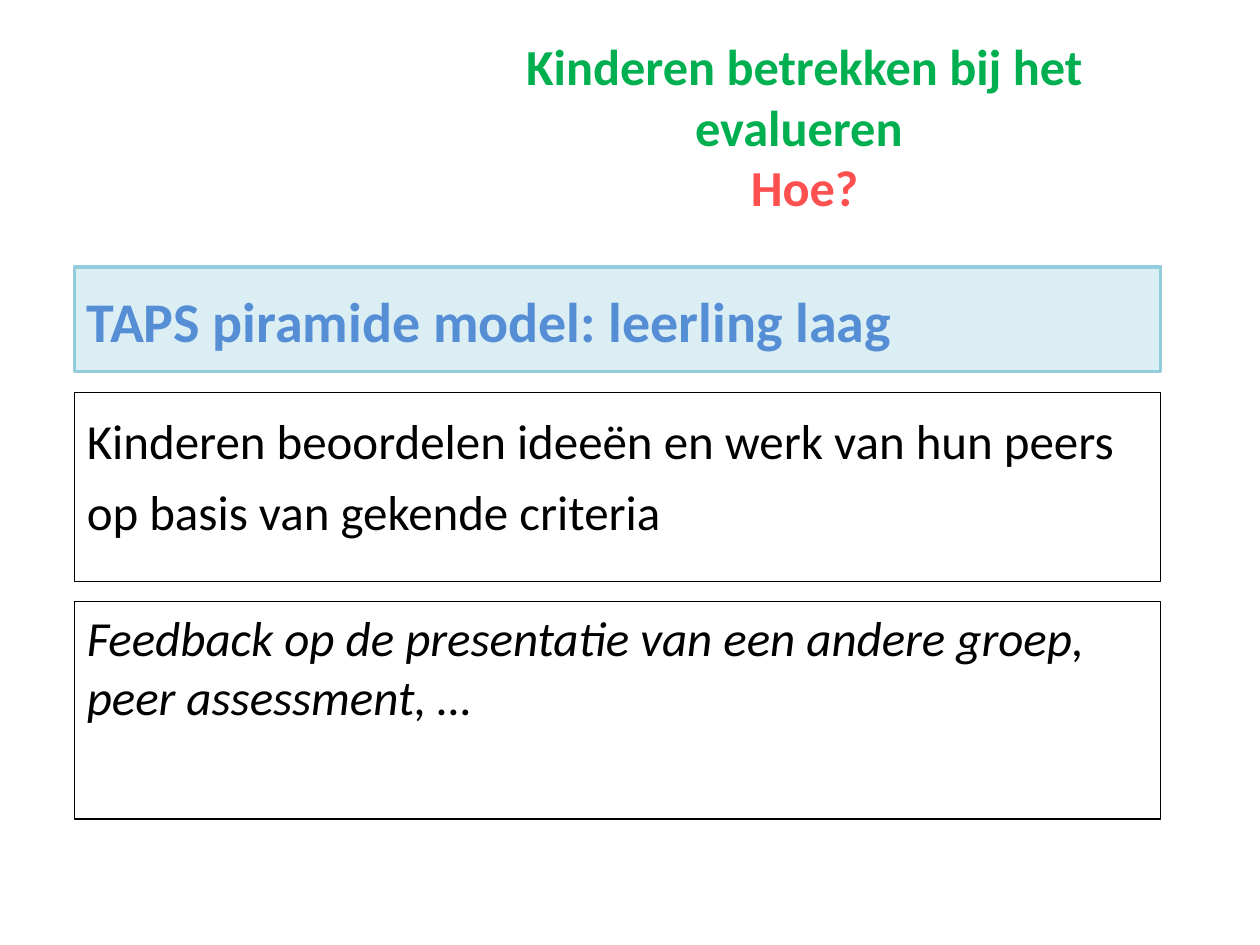
import pptx
import pptx.dml.color
import pptx.enum.shapes
import pptx.enum.text
import pptx.util

Cm, Pt = pptx.util.Cm, pptx.util.Pt
ALIGN = pptx.enum.text.PP_ALIGN
ANCHOR = pptx.enum.text.MSO_ANCHOR


def paint(target, color):
    """Give a fill a solid colour, or a font or line its colour."""
    if hasattr(target, "solid"):
        target.solid()
        target = target.fore_color
    else:
        target = target.color
    target.rgb = pptx.dml.color.RGBColor.from_string(color)


def style(item, values):
    for name, value in values.items():
        setattr(item, name, value)


def write(para, text, color, **look):
    run = para.add_run()
    run.text = text
    style(run.font, {"name": "Calibri", **look})
    paint(run.font, color)


def add_title(slide, box):
    title = slide.shapes.title
    style(title, dict(zip(("left", "top", "width", "height"), box)))
    style(title.text_frame, {
        "word_wrap": True,
        "auto_size": pptx.enum.text.MSO_AUTO_SIZE.NONE,
        "vertical_anchor": ANCHOR.MIDDLE,
    })
    para = title.text_frame.paragraphs[0]
    para.alignment = ALIGN.CENTER
    look = {"size": Pt(28.8), "bold": True}
    write(para, "Kinderen betrekken bij het evalueren ", "00B050", **look)
    para.add_line_break()
    write(para, "Hoe?", "FF5050", **look)


def add_panel(slide, box, text, color="000000", fill=None, edge="000000",
              width=0.75, space=1.0, **look):
    kind = pptx.enum.shapes.MSO_SHAPE.RECTANGLE
    panel = slide.shapes.add_shape(kind, *box)
    panel.shadow.inherit = False
    if fill:
        paint(panel.fill, fill)
    else:
        panel.fill.background()
    paint(panel.line, edge)
    panel.line.width = Pt(width)
    frame = panel.text_frame
    style(frame, {"word_wrap": True, "vertical_anchor": ANCHOR.TOP})
    para = frame.paragraphs[0]
    style(para, {"alignment": ALIGN.LEFT, "line_spacing": space})
    write(para, text, color, **look)


def main():
    deck = pptx.Presentation()
    style(deck, {"slide_width": Cm(25.4), "slide_height": Cm(19.05)})
    slide = deck.slides.add_slide(deck.slide_layouts.get_by_name("Title Only"))
    add_title(slide, (Cm(8.31), Cm(0.76), Cm(15.82), Cm(3.56)))

    panels = [
        (5.38, 2.11, "TAPS piramide model: leerling laag",
         {"color": "558ED5", "fill": "DBEEF4", "edge": "93CDDD", "width": 2,
          "space": 1.2, "size": Pt(32), "bold": True}),
        (7.92, 3.81, "Kinderen beoordelen ideeën en werk van hun peers "
         "op basis van gekende criteria",
         {"space": 1.2, "size": Pt(28)}),
        (12.12, 4.39, "Feedback op de presentatie van een andere groep, "
         "peer assessment, …",
         {"size": Pt(28), "italic": True}),
    ]
    for top, height, text, look in panels:
        box = Cm(1.5), Cm(top), Cm(21.9), Cm(height)
        add_panel(slide, box, text, **look)
    deck.save("out.pptx")


if __name__ == "__main__":
    main()
